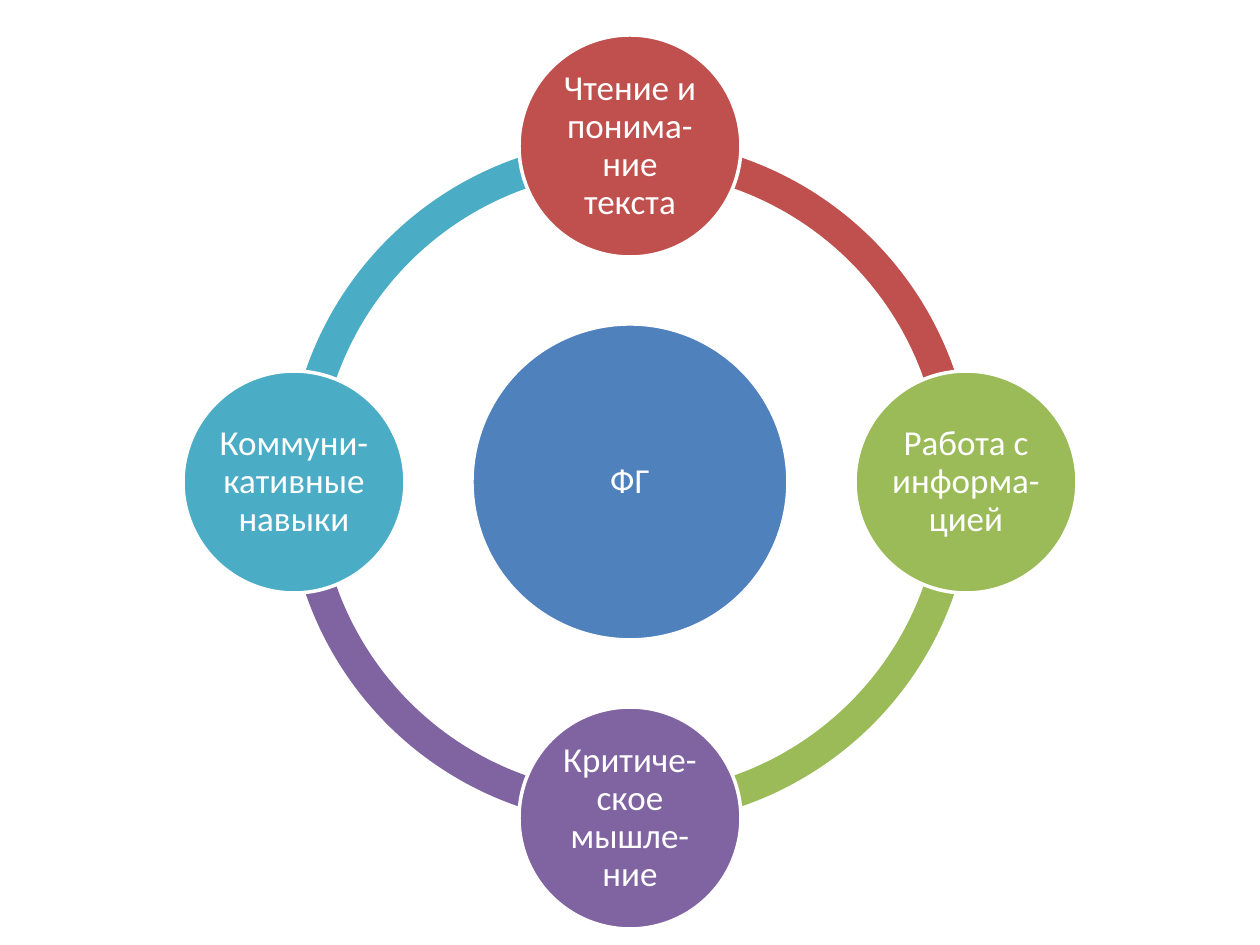
import math

import pptx
import pptx.dml.color
import pptx.enum.shapes
import pptx.enum.text
import pptx.util

RGBColor = pptx.dml.color.RGBColor
SHAPE_TYPE = pptx.enum.shapes.MSO_SHAPE

WHITE = RGBColor(0xFF, 0xFF, 0xFF)
BLUE = RGBColor(0x4F, 0x81, 0xBD)
RED = RGBColor(0xC0, 0x50, 0x4D)
GREEN = RGBColor(0x9B, 0xBB, 0x59)
PURPLE = RGBColor(0x80, 0x64, 0xA2)
TEAL = RGBColor(0x4B, 0xAC, 0xC6)

SCALE = 914400 / 126
FULL_TURN = 360
ANGLE_UNIT = 0.6
BAND_RATIO = 0.046

CENTER_LABEL = "ФГ"
SKILLS = [
    ("Чтение и понима-ние текста", RED),
    ("Работа с информа-цией", GREEN),
    ("Критиче-ское мышле-ние", PURPLE),
    ("Коммуни-кативные навыки", TEAL),
]


def px(length):
    return pptx.util.Emu(round(length * SCALE))


def write_text(shape, text, size=20, font="Calibri", color=WHITE, inset=4, line_spacing=0.9):
    frame = shape.text_frame
    frame.word_wrap = True
    frame.vertical_anchor = pptx.enum.text.MSO_ANCHOR.MIDDLE
    frame.margin_left = frame.margin_right = px(inset)
    frame.margin_top = frame.margin_bottom = px(inset)
    paragraph = frame.paragraphs[0]
    paragraph.alignment = pptx.enum.text.PP_ALIGN.CENTER
    paragraph.line_spacing = line_spacing
    run = paragraph.add_run()
    run.text = text
    run.font.name = font
    run.font.size = pptx.util.Pt(size)
    run.font.color.rgb = color


def add_round_shape(slide, kind, center_x, center_y, diameter, fill):
    left, top = center_x - diameter / 2, center_y - diameter / 2
    shape = slide.shapes.add_shape(kind, px(left), px(top), px(diameter), px(diameter))
    shape.shadow.inherit = False
    shape.fill.solid()
    shape.fill.fore_color.rgb = fill
    shape.line.fill.background()
    return shape


def add_arc(slide, center_x, center_y, diameter, start, sweep, fill):
    arc = add_round_shape(slide, SHAPE_TYPE.BLOCK_ARC, center_x, center_y, diameter, fill)
    arc.adjustments[0] = start % FULL_TURN * ANGLE_UNIT
    arc.adjustments[1] = (start + sweep) % FULL_TURN * ANGLE_UNIT
    arc.adjustments[2] = BAND_RATIO


def add_circle(slide, center_x, center_y, diameter, text, fill):
    circle = add_round_shape(slide, SHAPE_TYPE.OVAL, center_x, center_y, diameter, fill)
    circle.line.color.rgb = WHITE
    circle.line.width = pptx.util.Pt(2)
    write_text(circle, text)


def add_radial_cycle(slide, left, top, size, center_label, skills,
                     ring_diameter=686, hub_diameter=316, node_diameter=222):
    center_x, center_y = left + size / 2, top + size / 2
    orbit = (size - node_diameter) / 2
    sweep = FULL_TURN // len(skills)
    starts = [index * sweep - 90 for index in range(len(skills))]

    for start, (_, color) in reversed(list(zip(starts, skills))):
        add_arc(slide, center_x, center_y, ring_diameter, start, sweep, color)
    add_circle(slide, center_x, center_y, hub_diameter, center_label, BLUE)
    for start, (label, color) in zip(starts, skills):
        angle = math.radians(start)
        node_x = center_x + orbit * math.cos(angle)
        node_y = center_y + orbit * math.sin(angle)
        add_circle(slide, node_x, node_y, node_diameter, label, color)


def main():
    presentation = pptx.Presentation()
    presentation.slide_width = px(1260)
    presentation.slide_height = px(945)
    slide = presentation.slides.add_slide(presentation.slide_layouts[6])
    add_radial_cycle(slide, 183, 35, 894, CENTER_LABEL, SKILLS)
    presentation.save("out.pptx")


if __name__ == "__main__":
    main()
